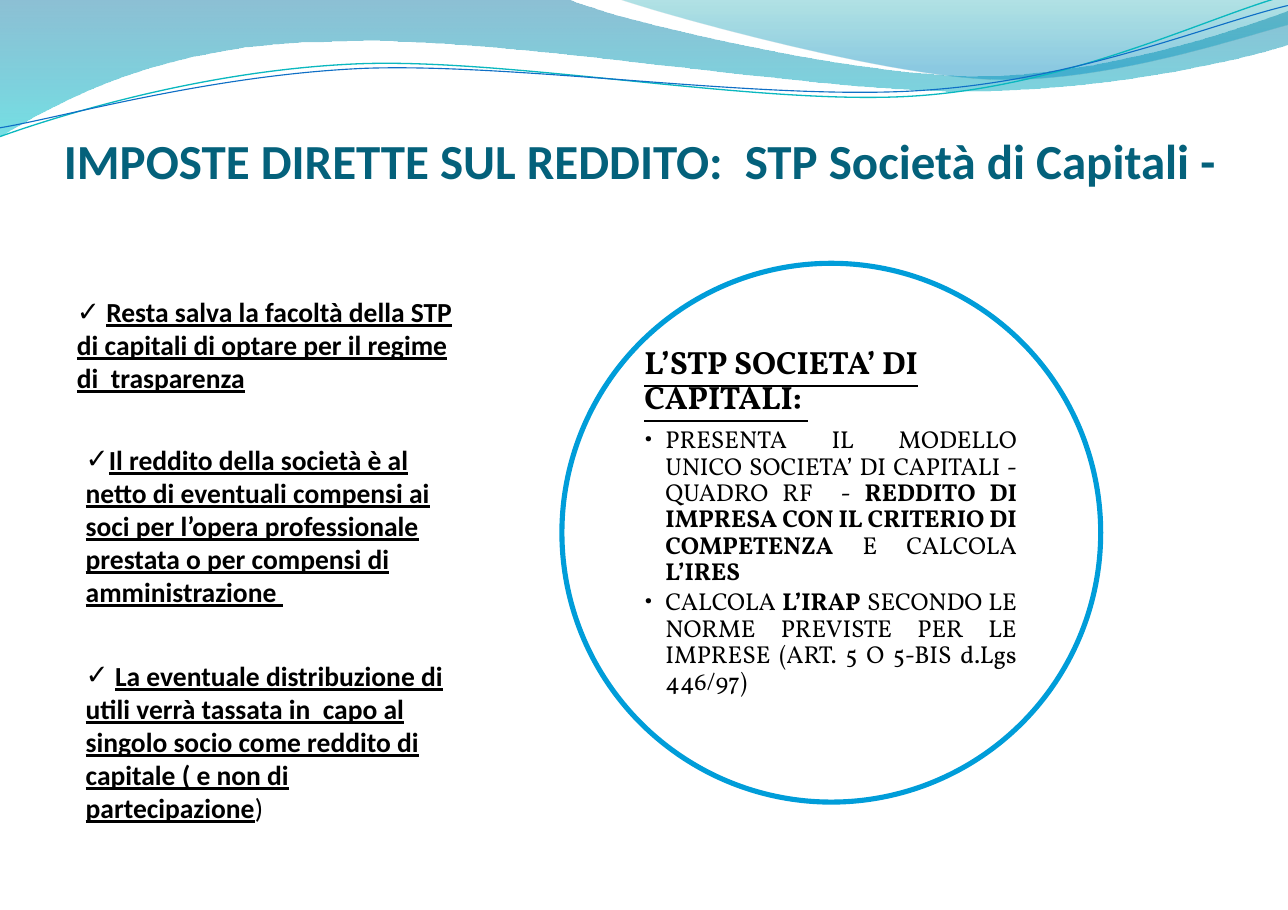
from dataclasses import dataclass
from math import cos, radians, sin

from lxml.etree import SubElement
from pptx import Presentation
from pptx.dml.color import RGBColor
from pptx.enum.shapes import MSO_SHAPE
from pptx.enum.text import MSO_ANCHOR, MSO_AUTO_SIZE, PP_ALIGN
from pptx.oxml.ns import qn
from pptx.shapes.autoshape import Shape
from pptx.slide import Slide
from pptx.text.text import TextFrame
from pptx.util import Inches, Pt

LINE_TILT = 2.7
LINE_CENTER = (5.84, 0.64)


@dataclass
class Span:
    text: str
    bold: bool = False
    underline: bool = False


@dataclass
class Para:
    spans: list[Span]
    size: float
    bullet: str = ""
    indent: float = 0
    line_spacing: float = 1
    space_after: float = 0
    align: PP_ALIGN = PP_ALIGN.LEFT


@dataclass
class Box:
    left: float
    top: float
    width: float
    height: float
    font: str
    paras: list[Para]
    inset_x: float = 0.1
    inset_y: float = 0.05
    auto_size: MSO_AUTO_SIZE = MSO_AUTO_SIZE.SHAPE_TO_FIT_TEXT


@dataclass
class Stop:
    position: float
    color: str
    opacity: int


@dataclass
class Ribbon:
    start: tuple[float, float]
    segments: list[tuple[float, ...]]
    stops: tuple[Stop, ...] = ()
    line_color: str = ""
    line_width: float = 0


RIBBONS = [
    Ribbon((0, 0), [
        (5.15, -0.01),
        (5.56, 0.18, 7.76, 0.69, 8.87, 0.69),
        (9.98, 0.69, 11.21, 0.28, 11.69, 0.1),
        (11.71, 0.4),
        (11.5, 0.48, 10.17, 0.83, 8.72, 0.83),
        (7.27, 0.83, 4.46, 0.31, 3.01, 0.38),
        (1.51, 0.39, 0.54, 0.91, -0.01, 1.25),
    ], (Stop(0, "0074A1", 45), Stop(1, "00C6CF", 55))),
    Ribbon((5.6, -0.01), [
        (5.96, 0.12, 7.97, 0.68, 8.99, 0.72),
        (10.01, 0.76, 11.24, 0.35, 11.69, 0.23),
        (11.69, 0),
    ], (Stop(0, "00A1A9", 30), Stop(0.8, "008BBF", 45))),
    Ribbon((0, 1.24), [
        (0.56, 1.04, 1.85, 0.64, 3.23, 0.58),
        (4.62, 0.52, 6.93, 0.97, 8.33, 0.87),
        (9.74, 0.77, 10.97, 0.15, 11.67, -0.04),
    ], line_color="0AB8BF", line_width=0.85),
    Ribbon((0, 1.16), [
        (0.55, 1.07, 1.91, 0.68, 3.31, 0.62),
        (4.71, 0.57, 6.98, 0.92, 8.38, 0.82),
        (9.78, 0.73, 11.01, 0.21, 11.69, 0.05),
    ], line_color="0F6FC6", line_width=0.75),
]


def circle_point(*spans: Span) -> Para:
    return Para(list(spans), 16, "•", 0.19, 0.9, 2.4, PP_ALIGN.JUSTIFY)


def check_point(*spans: Span) -> Para:
    return Para(list(spans), 18, "✓")


BOXES = [
    Box(5.82, 3.12, 3.44, 3.44, "Vollkorn", [
        Para([Span("L’STP SOCIETA’ DI CAPITALI: ", True, True)], 21,
             line_spacing=0.9, space_after=7.35),
        circle_point(
            Span("PRESENTA IL MODELLO UNICO SOCIETA’ DI CAPITALI - QUADRO RF  - "),
            Span("REDDITO DI IMPRESA CON IL CRITERIO DI COMPETENZA", True),
            Span(" E CALCOLA "),
            Span("L’IRES", True)),
        circle_point(
            Span("CALCOLA "),
            Span("L’IRAP", True),
            Span(" SECONDO LE NORME PREVISTE PER LE IMPRESE "
                 "(ART. 5 O 5-BIS d.Lgs 446/97)")),
    ], 0.03, 0.03, MSO_AUTO_SIZE.NONE),
    Box(0.6, 2.63, 3.75, 1.01, "Calibri", [check_point(
        Span(" "),
        Span("Resta salva la facoltà della STP di capitali di optare "
             "per il regime di  trasparenza", True, True))]),
    Box(0.68, 5.93, 3.5, 1.62, "Calibri", [check_point(
        Span(" "),
        Span("La eventuale distribuzione di utili verrà tassata in  capo al singolo "
             "socio come reddito di capitale ( e non di partecipazione", True, True),
        Span(")"))]),
    Box(0.68, 3.97, 3.67, 1.62, "Calibri", [check_point(
        Span("Il reddito della società è al netto di eventuali compensi ai soci "
             "per l’opera professionale prestata o per compensi di "
             "amministrazione ", True, True))]),
]


def rgb(color: str) -> RGBColor:
    return RGBColor.from_string(color)


def tilt(point: tuple[float, float], degrees: float) -> tuple[float, float]:
    (x, y), (center_x, center_y) = point, LINE_CENTER
    dx, dy, angle = x - center_x, y - center_y, radians(degrees)
    return (center_x + dx * cos(angle) - dy * sin(angle),
            center_y + dx * sin(angle) + dy * cos(angle))


def bend(shape: Shape, ribbon: Ribbon) -> None:
    lines = iter(list(shape._element.iter(qn("a:lnTo"))))
    for segment in ribbon.segments:
        curve = next(lines)
        if len(segment) == 6:
            curve.tag = qn("a:cubicBezTo")
            for _ in range(2):
                control = next(lines)
                curve.append(control[0])
                control.getparent().remove(control)


def fill_gradient(shape: Shape, stops: tuple[Stop, ...]) -> None:
    shape.fill.gradient()
    shape.fill.gradient_angle = 270
    for target, stop in zip(shape.fill.gradient_stops, stops):
        target.position = stop.position
        target.color.rgb = rgb(stop.color)
    for color, stop in zip(shape._element.spPr.iter(qn("a:srgbClr")), stops):
        SubElement(color, qn("a:alpha"), val=str(stop.opacity * 1000))


def draw_ribbon(page: Slide, ribbon: Ribbon) -> None:
    angle = 0 if ribbon.stops else LINE_TILT
    points = [ribbon.start]
    for segment in ribbon.segments:
        points += zip(segment[::2], segment[1::2])
    first, *rest = [tuple(map(Inches, tilt(point, angle))) for point in points]
    builder = page.shapes.build_freeform(*first)
    builder.add_line_segments(rest, close=bool(ribbon.stops))
    shape = builder.convert_to_shape()
    bend(shape, ribbon)
    shape.rotation = -angle
    shape.shadow.inherit = False
    if ribbon.stops:
        fill_gradient(shape, ribbon.stops)
        shape.line.fill.background()
    else:
        shape.fill.background()
        shape.line.color.rgb = rgb(ribbon.line_color)
        shape.line.width = Pt(ribbon.line_width)


def write_para(frame: TextFrame, index: int, para: Para, font: str) -> None:
    target = frame.add_paragraph() if index else frame.paragraphs[0]
    target.alignment = para.align
    target.line_spacing = para.line_spacing
    target.space_after = Pt(para.space_after)
    if para.bullet:
        properties = target._p.get_or_add_pPr()
        properties.set("marL", str(Inches(para.indent)))
        properties.set("indent", str(-Inches(para.indent)))
        SubElement(properties, qn("a:buFont"), typeface=font)
        SubElement(properties, qn("a:buChar"), char=para.bullet)
    for span in para.spans:
        run = target.add_run()
        run.text = span.text
        run.font.name, run.font.size = font, Pt(para.size)
        run.font.bold, run.font.underline = span.bold, span.underline
        run.font.color.rgb = rgb("000000")


def draw_box(page: Slide, box: Box) -> None:
    shape = page.shapes.add_textbox(
        *map(Inches, (box.left, box.top, box.width, box.height)))
    frame = shape.text_frame
    frame.word_wrap = True
    frame.auto_size = box.auto_size
    frame.margin_left = frame.margin_right = Inches(box.inset_x)
    frame.margin_top = frame.margin_bottom = Inches(box.inset_y)
    for index, para in enumerate(box.paras):
        write_para(frame, index, para, box.font)


def draw_title(page: Slide, text: str) -> None:
    title = page.shapes.title
    title.left, title.top = Inches(0.58), Inches(0.85)
    title.width, title.height = Inches(10.53), Inches(0.87)
    frame = title.text_frame
    frame.auto_size = MSO_AUTO_SIZE.NONE
    frame.vertical_anchor = MSO_ANCHOR.BOTTOM
    frame.margin_left = frame.margin_right = frame.margin_bottom = 0
    frame.margin_top = Inches(0.06)
    frame.paragraphs[0].alignment = PP_ALIGN.LEFT
    run = frame.paragraphs[0].add_run()
    run.text = text
    run.font.name, run.font.size, run.font.bold = "Calibri", Pt(32), True
    run.font.color.rgb = rgb("04617B")


def draw_circle(page: Slide) -> None:
    circle = page.shapes.add_shape(
        MSO_SHAPE.OVAL, *map(Inches, (5.1, 2.39, 4.89, 4.89)))
    circle.shadow.inherit = False
    circle.fill.solid()
    circle.fill.fore_color.rgb = rgb("FFFFFF")
    circle.line.color.rgb = rgb("009DD9")
    circle.line.width = Pt(3.35)


def main() -> None:
    deck = Presentation()
    deck.slide_width, deck.slide_height = Inches(11.69), Inches(8.26)
    page = deck.slides.add_slide(deck.slide_layouts[5])
    for ribbon in RIBBONS:
        draw_ribbon(page, ribbon)
    draw_title(page, "IMPOSTE DIRETTE SUL REDDITO:  STP Società di Capitali -")
    draw_circle(page)
    for box in BOXES:
        draw_box(page, box)
    deck.save("out.pptx")


if __name__ == "__main__":
    main()
